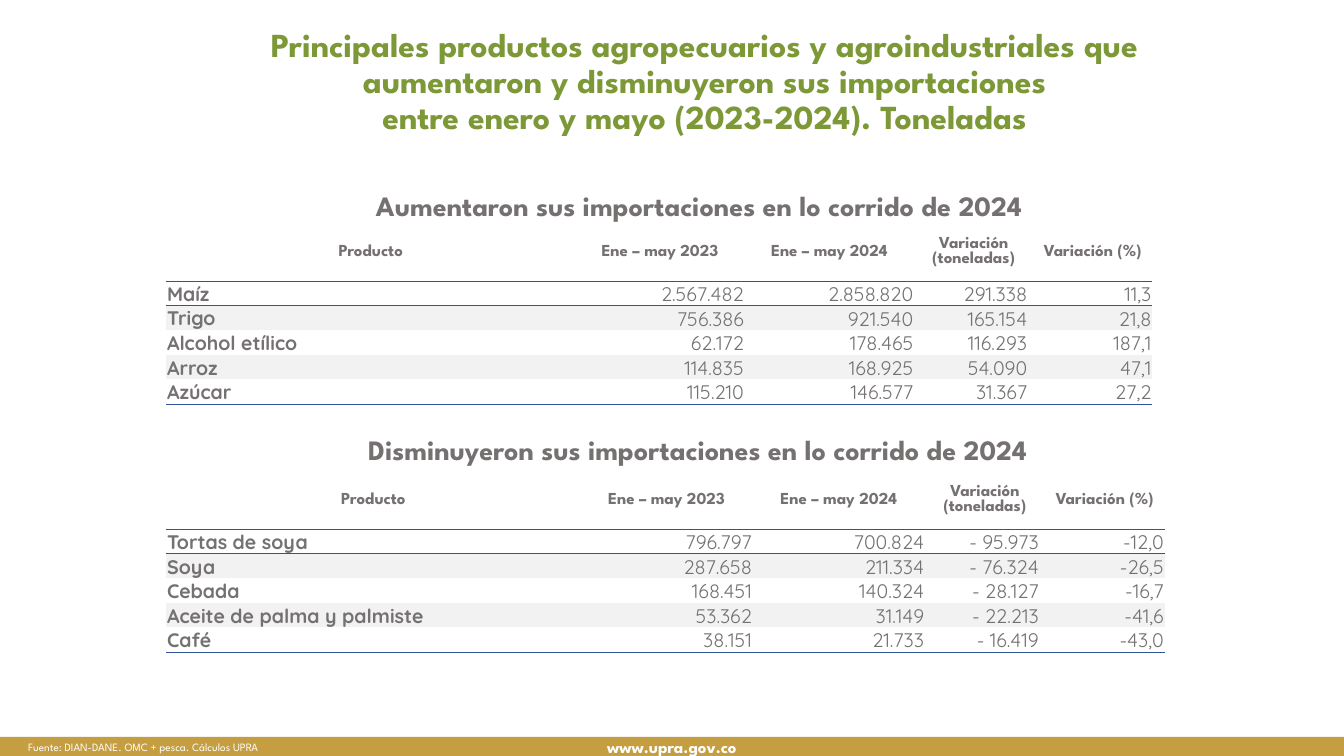
from lxml import etree
from pptx import Presentation
from pptx.dml.color import RGBColor
from pptx.enum.shapes import MSO_SHAPE
from pptx.enum.text import MSO_ANCHOR, MSO_AUTO_SIZE, PP_ALIGN
from pptx.oxml.ns import qn
from pptx.util import Cm, Pt

LEFT, CENTER, RIGHT, JUSTIFY = PP_ALIGN.LEFT, PP_ALIGN.CENTER, PP_ALIGN.RIGHT, PP_ALIGN.JUSTIFY
TOP, MIDDLE, BOTTOM = MSO_ANCHOR.TOP, MSO_ANCHOR.MIDDLE, MSO_ANCHOR.BOTTOM
NO_FIT = MSO_AUTO_SIZE.NONE
RECTANGLE = MSO_SHAPE.RECTANGLE
PLAIN_TABLE = "{2D5ABB26-0587-4C30-8999-92F81FD0307C}"

GREEN, GOLD, WHITE = "7D9837", "C59E41", "FFFFFF"
GRAY, BODY_GRAY, BAND, RULE = "767171", "757171", "F2F2F2", "2F5597"
HEADING_FONT, BODY_FONT = "League Spartan", "Quicksand"

HEADERS = ["Producto", "Ene – may 2023", "Ene – may 2024", "Variación (toneladas)", "Variación (%)"]
TONNES_COLUMN = 3
INCREASES = [
    ["Maíz", "2.567.482", "2.858.820", "291.338", "11,3"],
    ["Trigo", "756.386", "921.540", "165.154", "21,8"],
    ["Alcohol etílico", "62.172", "178.465", "116.293", "187,1"],
    ["Arroz", "114.835", "168.925", "54.090", "47,1"],
    ["Azúcar", "115.210", "146.577", "31.367", "27,2"],
]
DECREASES = [
    ["Tortas de soya", "796.797", "700.824", "- 95.973", "-12,0"],
    ["Soya", "287.658", "211.334", "- 76.324", "-26,5"],
    ["Cebada", "168.451", "140.324", "- 28.127", "-16,7"],
    ["Aceite de palma y palmiste", "53.362", "31.149", "- 22.213", "-41,6"],
    ["Café", "38.151", "21.733", "- 16.419", "-43,0"],
]


def color(hex_code):
    return RGBColor.from_string(hex_code)


def set_attributes(target, values):
    for attribute, value in values.items():
        setattr(target, attribute, value)


def write(frame, text, size, hex_code, align, bold=True, font=HEADING_FONT):
    frame.text = text
    for paragraph in frame.paragraphs:
        paragraph.alignment = align
        set_attributes(paragraph.font, {"size": Pt(size), "name": font, "bold": bold})
        paragraph.font.color.rgb = color(hex_code)


def place(shape, left, top, width, height):
    set_attributes(shape, {"left": Cm(left), "top": Cm(top), "width": Cm(width), "height": Cm(height)})


def add_title(slide, text):
    title = slide.shapes.title
    place(title, 5.26, 0.58, 24.99, 2.72)
    set_attributes(title.text_frame, {"word_wrap": True, "auto_size": NO_FIT, "vertical_anchor": TOP})
    write(title.text_frame, text, 24, GREEN, CENTER)
    title.text_frame.paragraphs[0].line_spacing = 0.9


def add_footer_bar(slide, text):
    bar = slide.shapes.add_shape(RECTANGLE, Cm(0), Cm(18.57), Cm(33.87), Cm(0.48))
    bar.shadow.inherit = False
    bar.fill.solid()
    bar.fill.fore_color.rgb = color(GOLD)
    bar.line.fill.background()
    bar.text_frame.vertical_anchor = MIDDLE
    write(bar.text_frame, text, 12, WHITE, CENTER)


def add_label(slide, box, text, size, hex_code, align, bold):
    label = slide.shapes.add_textbox(*map(Cm, box))
    label.text_frame.word_wrap = True
    write(label.text_frame, text, size, hex_code, align, bold)


def add_border(cell, side):
    line = etree.SubElement(cell._tc.get_or_add_tcPr(), qn(f"a:{side}"), w=str(Pt(0.25)))
    fill = etree.SubElement(line, qn("a:solidFill"))
    etree.SubElement(fill, qn("a:srgbClr"), val=RULE)


def format_cell(cell, text, row, column, last_row):
    header, product = row == 0, column == 0
    inset = Cm(0.02)
    right_inset = Cm(0.15) if column == TONNES_COLUMN and not header else inset
    set_attributes(cell, {
        "margin_left": inset, "margin_right": right_inset, "margin_top": inset, "margin_bottom": 0,
        "vertical_anchor": BOTTOM if product and not header else MIDDLE,
    })
    if header:
        write(cell.text_frame, text, 12, GRAY, CENTER)
    else:
        write(cell.text_frame, text, 14, BODY_GRAY, LEFT if product else RIGHT, product, BODY_FONT)
    if row == 1:
        add_border(cell, "lnT")
    if row in (0, last_row):
        add_border(cell, "lnB")
    if row and row % 2 == 0:
        cell.fill.solid()
        cell.fill.fore_color.rgb = color(BAND)
    else:
        cell.fill.background()


def add_import_table(slide, top, widths, products):
    rows = [HEADERS] + products
    frame = slide.shapes.add_table(len(rows), len(HEADERS), Cm(4.19), Cm(top), Cm(sum(widths)), Cm(4.57))
    table = frame.table
    set_attributes(table, {"first_row": False, "horz_banding": False})
    next(frame.element.iter(qn("a:tableStyleId"))).text = PLAIN_TABLE
    for column, width in zip(table.columns, widths):
        column.width = Cm(width)
    for r, values in enumerate(rows):
        table.rows[r].height = Cm(0.62 if r else 1.47)
        for c, value in enumerate(values):
            format_cell(table.cell(r, c), value, r, c, len(products))


def main():
    deck = Presentation()
    set_attributes(deck, {"slide_width": Cm(33.87), "slide_height": Cm(19.05)})
    slide = deck.slides.add_slide(deck.slide_layouts[5])

    add_footer_bar(slide, "www.upra.gov.co")
    add_title(slide, "Principales productos agropecuarios y agroindustriales que aumentaron y "
                     "disminuyeron sus importaciones\ventre enero y mayo (2023-2024). Toneladas")
    add_label(slide, (0.46, 18.52, 32.79, 0.6), "Fuente: DIAN-DANE. OMC + pesca. Cálculos UPRA",
              8, WHITE, JUSTIFY, False)

    add_label(slide, (5.54, 4.62, 24.16, 1.12), "Aumentaron sus importaciones en lo corrido de 2024",
              20, GRAY, CENTER, True)
    add_import_table(slide, 5.61, (10.31, 4.27, 4.27, 3, 3), INCREASES)

    add_label(slide, (4.52, 10.77, 26.14, 1.12), "Disminuyeron sus importaciones en lo corrido de 2024",
              20, GRAY, CENTER, True)
    add_import_table(slide, 11.86, (10.44, 4.34, 4.34, 3.02, 3.02), DECREASES)

    deck.save("out.pptx")


if __name__ == "__main__":
    main()
